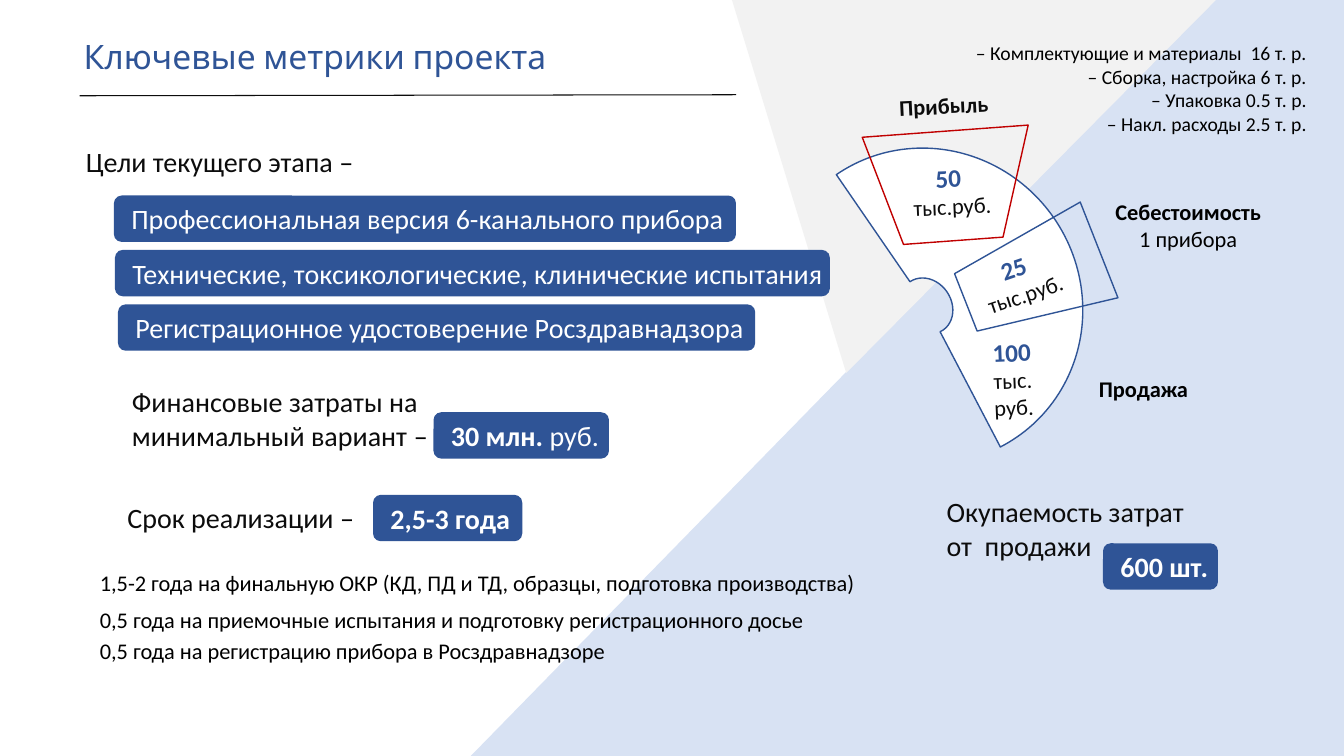
from lxml.etree import SubElement
from pptx import Presentation
from pptx.dml.color import RGBColor
from pptx.enum.shapes import MSO_CONNECTOR, MSO_SHAPE
from pptx.enum.text import MSO_ANCHOR, MSO_AUTO_SIZE, PP_ALIGN
from pptx.oxml.ns import qn
from pptx.util import Inches, Pt

BLUE, PALE, GREY, RED = "2F5496", "D8E2F3", "F2F2F2", "C00000"
INK, BLACK, WHITE = "0C0C0C", "000000", "FFFFFF"
LEFT, CENTER, RIGHT = PP_ALIGN.LEFT, PP_ALIGN.CENTER, PP_ALIGN.RIGHT


def draw(kind, place, fill=None, line=None, turn=0):
    shape = page.shapes.add_shape(kind, *map(Inches, place))
    shape.shadow.inherit = False
    shape.rotation = turn
    if fill:
        shape.fill.solid()
        shape.fill.fore_color.rgb = RGBColor.from_string(fill)
    else:
        shape.fill.background()
    if line:
        shape.line.color.rgb = RGBColor.from_string(line)
        shape.line.width = Pt(1)
    else:
        shape.line.fill.background()
    return shape


def write(box, lines, align=LEFT, anchor=MSO_ANCHOR.TOP, font="Calibri"):
    """Each line is a list of (text, size, colour, bold) spans."""
    frame = box.text_frame
    settings = {"word_wrap": True, "auto_size": MSO_AUTO_SIZE.NONE, "vertical_anchor": anchor}
    for name, value in settings.items():
        setattr(frame, name, value)
    for number, spans in enumerate(lines):
        para = frame.paragraphs[0] if number == 0 else frame.add_paragraph()
        para.alignment = align
        for text, size, colour, bold in spans:
            span = para.add_run()
            span.text = text
            for name, value in {"name": font, "size": Pt(size), "bold": bold}.items():
                setattr(span.font, name, value)
            span.font.color.rgb = RGBColor.from_string(colour)


deck = Presentation()
deck.slide_width, deck.slide_height = Inches(13.33), Inches(7.5)
page = deck.slides.add_slide(deck.slide_layouts[1])
title, stages = page.placeholders

# Background
slope = draw(MSO_SHAPE.RIGHT_TRIANGLE, (4.67, 0, 7.33, 7.5), PALE)
slope._element.spPr.find(qn("a:xfrm")).set("flipH", "1")
draw(MSO_SHAPE.RECTANGLE, (12, 0, 1.33, 7.5), PALE)
wedge = draw(MSO_SHAPE.ISOSCELES_TRIANGLE, (7.26, 0, 4.8, 3.7), GREY, turn=180)
wedge.adjustments[0] = 0.764

# Title and stage list, brought in front of the background
for holder, place in ((title, (0.73, 0.31, 11.29, 0.5)), (stages, (0.89, 5.6, 8.6, 1.05))):
    holder.left, holder.top, holder.width, holder.height = map(Inches, place)
    page.shapes._spTree.append(holder._element)
write(title, [[("Ключевые метрики проекта", 24, BLUE, False)]], font="Cabin")
write(stages, [[(text, 16, BLACK, False)] for text in (
    "1,5-2 года на финальную ОКР (КД, ПД и ТД, образцы, подготовка производства)",
    "0,5 года на приемочные испытания и подготовку регистрационного досье",
    "0,5 года на регистрацию прибора в Росздравнадзоре",
)])
for para, spacing, before in zip(stages.text_frame.paragraphs, (1, 1.15, 1.15), (0, 4, 0)):
    para.line_spacing, para.space_before = spacing, Pt(before)
    properties = para._p.get_or_add_pPr()
    properties.set("marL", str(Inches(0.38)))
    properties.set("indent", str(Inches(-0.38)))
    SubElement(properties, qn("a:buNone"))

# Rule under the title
rule = page.shapes.add_connector(
    MSO_CONNECTOR.STRAIGHT, Inches(0.79), Inches(0.95), Inches(7.3), Inches(0.94))
rule.line.color.rgb = RGBColor.from_string(INK)
rule.line.width = Pt(0.75)
SubElement(rule._element.spPr, qn("a:effectLst"))

# Blue pills: left, top, width, spans as (text, bold)
pills = [
    (1.13, 1.94, 6.17, [("Профессиональная версия 6-канального прибора", False)]),
    (1.14, 2.48, 7.09, [("Технические, токсикологические, клинические испытания", False)]),
    (1.17, 3.02, 6.32, [("Регистрационное удостоверение Росздравнадзора", False)]),
    (4.3, 4.09, 1.74, [("30 млн. ", True), ("руб.", False)]),
    (3.7, 4.91, 1.48, [("2,5-3 года", True)]),
    (10.94, 5.39, 1.14, [("600 шт.", True)]),
]
for left, top, width, spans in pills:
    pill = draw(MSO_SHAPE.ROUNDED_RECTANGLE, (left, top, width, 0.46), BLUE)
    pill.text_frame.margin_left, pill.text_frame.margin_right = Inches(0.15), 0
    write(pill, [[(text, 20, WHITE, bold) for text, bold in spans]], anchor=MSO_ANCHOR.MIDDLE)

# Fan of price, profit and cost
fan = draw(MSO_SHAPE.BLOCK_ARC, (7.61, 1.5, 3.16, 3.07), WHITE, BLUE, 55.5)
for number, value in enumerate((108, 4.135, 0.42)):
    fan.adjustments[number] = value
draw(MSO_SHAPE.FLOWCHART_MANUAL_OPERATION, (8.59, 1.3, 1.65, 1.09), line=RED, turn=355.8)
draw(MSO_SHAPE.FLOWCHART_MANUAL_OPERATION, (9.73, 2.03, 1.02, 1.42), line=BLUE, turn=68.5)

# Captions: place, rotation, alignment, lines
unit = [("тыс.руб.", 16, INK, False)]
costs = ("– Комплектующие и материалы  16 т. р.", "– Сборка, настройка 6 т. р.",
         "– Упаковка 0.5 т. р.", "– Накл. расходы 2.5 т. р.")
captions = [
    ((0.56, 1.38, 3.3, 0.44), 0, CENTER,
     [[("Цели текущего этапа ", 20, INK, False), ("– ", 20, BLACK, False)]]),
    ((1.21, 3.77, 3.3, 0.77), 0, LEFT,
     [[("Финансовые затраты на минимальный вариант ", 20, INK, False), ("–", 20, BLACK, False)]]),
    ((0.77, 4.92, 3.3, 0.44), 0, CENTER,
     [[("Срок реализации ", 20, INK, False), ("– ", 20, BLACK, False)]]),
    ((9.29, 4.86, 3.15, 0.77), 0, LEFT,
     [[(text, 20, INK, False)] for text in ("Окупаемость затрат", "от  продажи")]),
    ((9.31, 0.36, 3.75, 1.04), 0, RIGHT, [[(text, 14, BLACK, False)] for text in costs]),
    ((8.82, 0.86, 1.1, 0.37), 357.2, LEFT, [[("Прибыль", 16, INK, True)]]),
    ((8.95, 1.56, 0.98, 0.67), 357.6, CENTER, [[("50 ", 18, BLUE, True)], unit]),
    ((9.63, 2.44, 0.98, 0.67), 341.3, CENTER, [[("25 ", 18, BLUE, True)], unit]),
    ((9.75, 3.29, 0.59, 0.94), 357.6, CENTER,
     [[("100", 18, BLUE, True)], [("тыс.", 16, INK, False)], [("руб.", 16, INK, False)]]),
    ((10.8, 3.67, 1.09, 0.37), 0, LEFT, [[("Продажа", 16, BLACK, True)]]),
    ((10.85, 1.92, 1.87, 0.64), 0, CENTER,
     [[("Себестоимость", 16, BLACK, True)], [("1 прибора", 16, BLACK, False)]]),
]
for place, turn, align, lines in captions:
    box = page.shapes.add_textbox(*map(Inches, place))
    box.rotation = turn
    write(box, lines, align)

deck.save("out.pptx")
